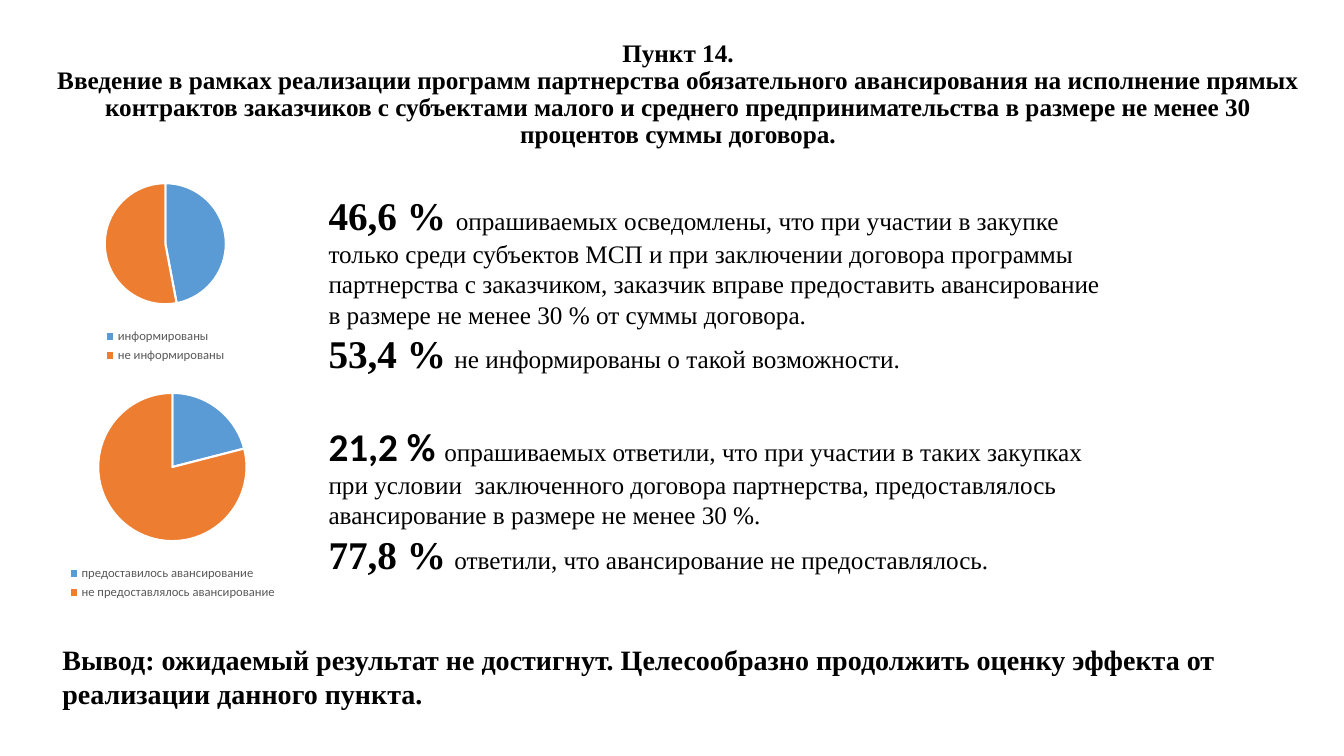
from pptx import Presentation
from pptx.chart.data import CategoryChartData
from pptx.dml.color import RGBColor
from pptx.enum.chart import XL_CHART_TYPE, XL_LEGEND_POSITION
from pptx.enum.text import MSO_ANCHOR, MSO_AUTO_SIZE, PP_ALIGN
from pptx.util import Inches, Pt


def color(code):
    return RGBColor.from_string(code)


class Deck:
    serif = "Times New Roman"
    sans = "Calibri"
    ink = "000000"
    gray = "595959"
    tints = ("5B9BD5", "ED7D31")

    def __init__(self, wide, high):
        self.show = Presentation()
        self.show.slide_width = Inches(wide)
        self.show.slide_height = Inches(high)
        self.slide = self.show.slides.add_slide(self.show.slide_layouts[5])

    def style(self, font, size, bold=False, name=serif, tint=ink):
        font.size, font.bold, font.name = Pt(size), bold, name
        font.color.rgb = color(tint)

    def add(self, para, text, size, bold=False, name=serif):
        run = para.add_run()
        run.text = text
        self.style(run.font, size, bold, name)

    def title(self, box, lines, size):
        head = self.slide.shapes.title
        head.left, head.top, head.width, head.height = map(Inches, box)
        frame = head.text_frame
        frame.word_wrap = True
        frame.auto_size = MSO_AUTO_SIZE.NONE
        frame.vertical_anchor = MSO_ANCHOR.MIDDLE
        para = frame.paragraphs[0]
        para.alignment = PP_ALIGN.CENTER
        para.line_spacing = 0.9
        for row, line in enumerate(lines):
            if row:
                para.add_line_break()
            self.add(para, line, size, True)

    def text(self, box, paras):
        frame = self.slide.shapes.add_textbox(*map(Inches, box)).text_frame
        frame.word_wrap = True
        for row, (gap, runs) in enumerate(paras):
            para = frame.add_paragraph() if row else frame.paragraphs[0]
            para.space_before = Pt(gap)
            for run in runs:
                self.add(para, *run)

    def pie(self, box, parts):
        data = CategoryChartData()
        data.categories = list(parts)
        data.add_series("Доля", list(parts.values()))
        chart = self.slide.shapes.add_chart(
            XL_CHART_TYPE.PIE, *map(Inches, box), data).chart
        self.style(chart.font, 10, name=self.sans)
        chart.has_title = False
        chart.has_legend = True
        chart.legend.position = XL_LEGEND_POSITION.BOTTOM
        chart.legend.include_in_layout = False
        self.style(chart.legend.font, 9, name=self.sans, tint=self.gray)
        plot = chart.plots[0]
        plot.vary_by_categories = True
        for spot, tint in enumerate(self.tints):
            form = plot.series[0].points[spot].format
            form.fill.solid()
            form.fill.fore_color.rgb = color(tint)
            form.line.color.rgb = color("FFFFFF")
            form.line.width = Pt(1.5)


def main():
    deck = Deck(13.33, 7.5)
    deck.title((0.38, 0.4, 12.69, 1.08), (
        "Пункт 14.",
        "Введение в рамках реализации программ партнерства обязательного "
        "авансирования на исполнение прямых контрактов заказчиков с субъектами "
        "малого и среднего предпринимательства в размере не менее 30 процентов "
        "суммы договора."), 18)
    deck.pie((0.38, 1.68, 2.52, 1.96),
             {"информированы": 47, "не информированы": 53})
    deck.text((3.16, 1.85, 8.02, 4.91), (
        (0, (("46,6 % ", 28, True),
             ("опрашиваемых осведомлены, что при участии в закупке только среди "
              "субъектов МСП и при заключении договора программы партнерства с "
              "заказчиком, заказчик вправе предоставить авансирование в размере "
              "не менее 30 % от суммы договора.", 18))),
        (0, (("53,4 %", 28, True), (" ", 24, True),
             ("не информированы о такой возможности.", 18))),
        (33, (("21,2 % ", 28, True, deck.sans),
              ("опрашиваемых ответили, что при участии в таких закупках при "
               "условии  заключенного договора партнерства, предоставлялось "
               "авансирование в размере не менее 30 %.", 18))),
        (0, (("77,8 %", 28, True), (" ", 24, True),
             ("ответили, что авансирование не предоставлялось.", 18)))))
    deck.text((0.52, 6.33, 12.56, 0.77), (
        (0, (("Вывод: ожидаемый результат не достигнут. Целесообразно продолжить "
              "оценку эффекта от реализации данного пункта.", 20, True),)),))
    deck.pie((0.52, 3.76, 2.38, 2.23),
             {"предоставилось авансирование": 21,
              "не предоставлялось авансирование": 79})
    deck.show.save("out.pptx")


if __name__ == "__main__":
    main()
